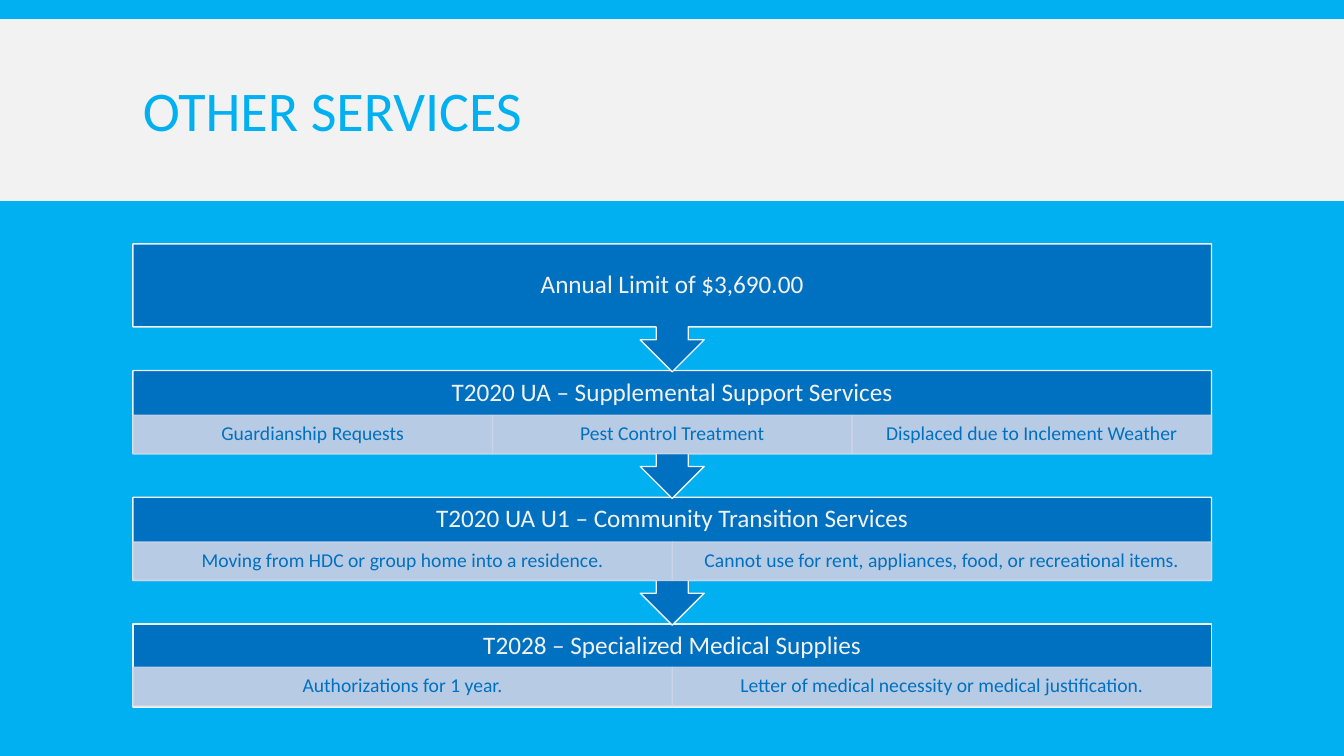
from dataclasses import dataclass

from lxml import etree
from pptx import Presentation
from pptx import util as u
from pptx.dml import color
from pptx.enum import shapes, text
from pptx.oxml import ns
from pptx.shapes.autoshape import Shape
from pptx.slide import Slide

HUES = {"sky": "00B0F0", "pale": "F2F2F2", "blue": "0070C0", "mist": "CCD5E8"}
FONT = "Calibri"
LEFT, TOP, WIDE = 95, 174.2, 770.4
STEP, CALL, BODY = 90.5, 91.4, 59.4
HEAD, BAND = 32.2, 27.5


@dataclass
class Stage:
    title: str
    notes: tuple[str, ...] = ()


STAGES = [
    Stage("Annual Limit of $3,690.00"),
    Stage(
        "T2020 UA – Supplemental Support Services",
        ("Guardianship Requests", "Pest Control Treatment", "Displaced due to Inclement Weather"),
    ),
    Stage(
        "T2020 UA U1 – Community Transition Services",
        (
            "Moving from HDC or group home into a residence.",
            "Cannot use for rent, appliances, food, or recreational items.",
        ),
    ),
    Stage(
        "T2028 – Specialized Medical Supplies",
        ("Authorizations for 1 year.", "Letter of medical necessity or medical justification."),
    ),
]


def hue(name: str) -> color.RGBColor:
    return color.RGBColor.from_string(HUES[name])


def fade(shape: Shape, share: int) -> None:
    for tint in shape._element.spPr.iter(ns.qn("a:srgbClr")):
        etree.SubElement(tint, ns.qn("a:alpha"), val=str(share * 1000))


def block(
    slide: Slide, kind: shapes.MSO_SHAPE, x: float, y: float, w: float, h: float, fill: str, line: str = ""
) -> Shape:
    shape = slide.shapes.add_shape(kind, u.Pt(x), u.Pt(y), u.Pt(w), u.Pt(h))
    shape.shadow.inherit = False
    shape.fill.solid()
    shape.fill.fore_color.rgb = hue(fill)
    if line:
        shape.line.color.rgb = hue(line)
        shape.line.width = u.Pt(1)
    else:
        shape.line.fill.background()
    return shape


def write(
    shape: Shape, words: str, size: float, tone: str, side: text.PP_ALIGN, lead: float = 0.9, base: float = 0
) -> None:
    frame = shape.text_frame
    frame.word_wrap = True
    frame.vertical_anchor = text.MSO_ANCHOR.MIDDLE
    frame.margin_left = frame.margin_right = u.Pt(7.2)
    frame.margin_top = u.Pt(0)
    frame.margin_bottom = u.Pt(base)
    frame.text = words
    para = frame.paragraphs[0]
    para.alignment = side
    para.line_spacing = lead
    font = para.runs[0].font
    font.name = FONT
    font.size = u.Pt(size)
    font.color.rgb = hue(tone)


def draw(slide: Slide, stage: Stage, y: float, last: bool) -> None:
    rect = shapes.MSO_SHAPE.RECTANGLE
    mid = text.PP_ALIGN.CENTER
    kind = rect if last else shapes.MSO_SHAPE.DOWN_ARROW_CALLOUT
    box = block(slide, kind, LEFT, y, WIDE, BODY if last else CALL, "blue", "pale")
    write(box, stage.title, 18, "pale", mid, base=BODY - HEAD if stage.notes else 0)
    drop = 31 if last else 32
    for i, note in enumerate(stage.notes):
        w = WIDE / len(stage.notes)
        cell = block(slide, rect, LEFT + i * w, y + drop, w, BAND, "mist", "mist")
        fade(cell, 90)
        write(cell, note, 14, "blue", mid)


def main() -> None:
    deck = Presentation()
    deck.slide_width, deck.slide_height = u.Pt(960), u.Pt(540)
    slide = deck.slides.add_slide(deck.slide_layouts[6])
    back = slide.background.fill
    back.solid()
    back.fore_color.rgb = hue("sky")

    block(slide, shapes.MSO_SHAPE.RECTANGLE, 0, 13.7, 960, 129.8, "pale")
    title = slide.shapes.add_textbox(u.Pt(LEFT), u.Pt(22.3), u.Pt(WIDE), u.Pt(118.8))
    write(title, "OTHER SERVICES", 40, "sky", text.PP_ALIGN.LEFT, lead=0.85)

    end = len(STAGES) - 1
    for i, stage in reversed(list(enumerate(STAGES))):
        draw(slide, stage, TOP + i * STEP, i == end)
    deck.save("out.pptx")


if __name__ == "__main__":
    main()
